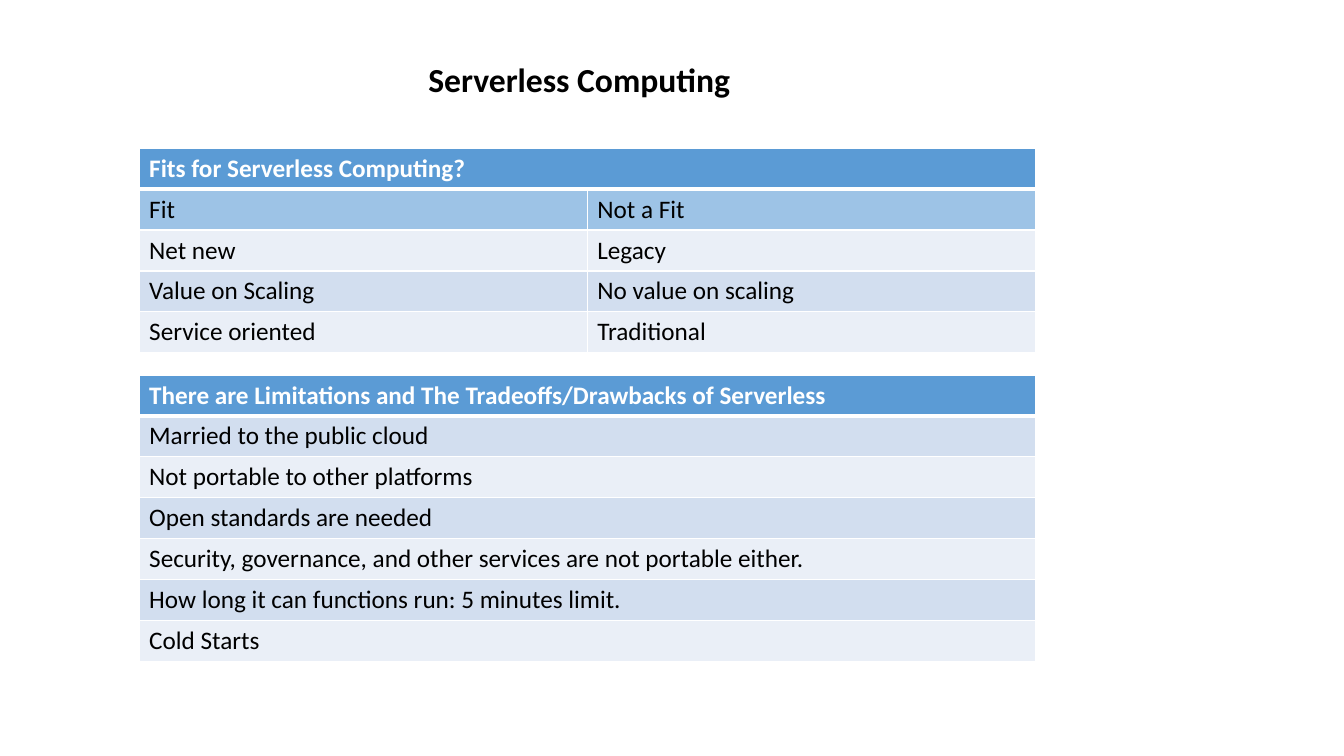
from lxml.etree import SubElement
from pptx import Presentation
from pptx.dml.color import RGBColor
from pptx.enum.text import MSO_AUTO_SIZE, PP_ALIGN
from pptx.oxml.ns import qn
from pptx.util import Inches, Pt

# Content
TITLE = "Serverless Computing"
FIT_ROWS = [
    ("Fits for Serverless Computing?", ""),
    ("Fit", "Not a Fit"),
    ("Net new", "Legacy"),
    ("Value on Scaling", "No value on scaling"),
    ("Service oriented", "Traditional"),
]
LIMITATION_ROWS = [
    ("There are Limitations and The Tradeoffs/Drawbacks of Serverless",),
    ("Married to the public cloud",),
    ("Not portable to other platforms",),
    ("Open standards are needed",),
    ("Security, governance, and other services are not portable either.",),
    ("How long it can functions run: 5 minutes limit.",),
    ("Cold Starts",),
]

# Style and layout
FONT = "Calibri"
COLORS = {
    "header": "5B9BD5",
    "subheader": "9DC3E6",
    "dark_band": "D2DEEF",
    "light_band": "EAEFF7",
    "white": "FFFFFF",
    "black": "000000",
}
TABLE_LEFT, TABLE_WIDTH = 1.38, 8.89


def color(name):
    return RGBColor.from_string(COLORS[name])


def style_text(paragraph, size, color_name, bold):
    font = paragraph.font
    font.name, font.size, font.bold = FONT, Pt(size), bold
    font.color.rgb = color(color_name)


def add_borders(cell, top, bottom):
    properties = cell._tc.get_or_add_tcPr()
    for side, width in (("L", 1), ("R", 1), ("T", top), ("B", bottom)):
        line = SubElement(properties, qn(f"a:ln{side}"), w=str(Pt(width)))
        fill = SubElement(line, qn("a:solidFill"))
        SubElement(fill, qn("a:srgbClr"), val=COLORS["white"])


def add_banded_table(slide, rows, top, height, subheader=False):
    column_count = len(rows[0])
    table = slide.shapes.add_table(
        len(rows), column_count, Inches(TABLE_LEFT), Inches(top),
        Inches(TABLE_WIDTH), Inches(height)).table
    for row_index, texts in enumerate(rows):
        is_header = row_index == 0
        if is_header:
            fill_name = "header"
        elif subheader and row_index == 1:
            fill_name = "subheader"
        else:
            fill_name = "dark_band" if row_index % 2 else "light_band"
        for column_index, text in enumerate(texts):
            cell = table.cell(row_index, column_index)
            add_borders(cell, top=3 if row_index == 1 else 1,
                        bottom=3 if is_header else 1)
            cell.fill.solid()
            cell.fill.fore_color.rgb = color(fill_name)
            cell.text = text
            style_text(cell.text_frame.paragraphs[0], 18,
                       "white" if is_header else "black", is_header)
    if column_count > 1:
        table.cell(0, 0).merge(table.cell(0, column_count - 1))


presentation = Presentation()
presentation.slide_width = Inches(13.33)
presentation.slide_height = Inches(7.5)
slide = presentation.slides.add_slide(presentation.slide_layouts[6])

# Tables
add_banded_table(slide, FIT_ROWS, top=1.47, height=2.03, subheader=True)
add_banded_table(slide, LIMITATION_ROWS, top=3.72, height=2.84)

# Title
title_box = slide.shapes.add_textbox(
    Inches(1.79), Inches(0.54), Inches(7.91), Inches(0.5))
title_frame = title_box.text_frame
title_frame.word_wrap = True
title_frame.auto_size = MSO_AUTO_SIZE.SHAPE_TO_FIT_TEXT
title_frame.text = TITLE
title_paragraph = title_frame.paragraphs[0]
title_paragraph.alignment = PP_ALIGN.CENTER
style_text(title_paragraph, 24, "black", True)

presentation.save("out.pptx")
